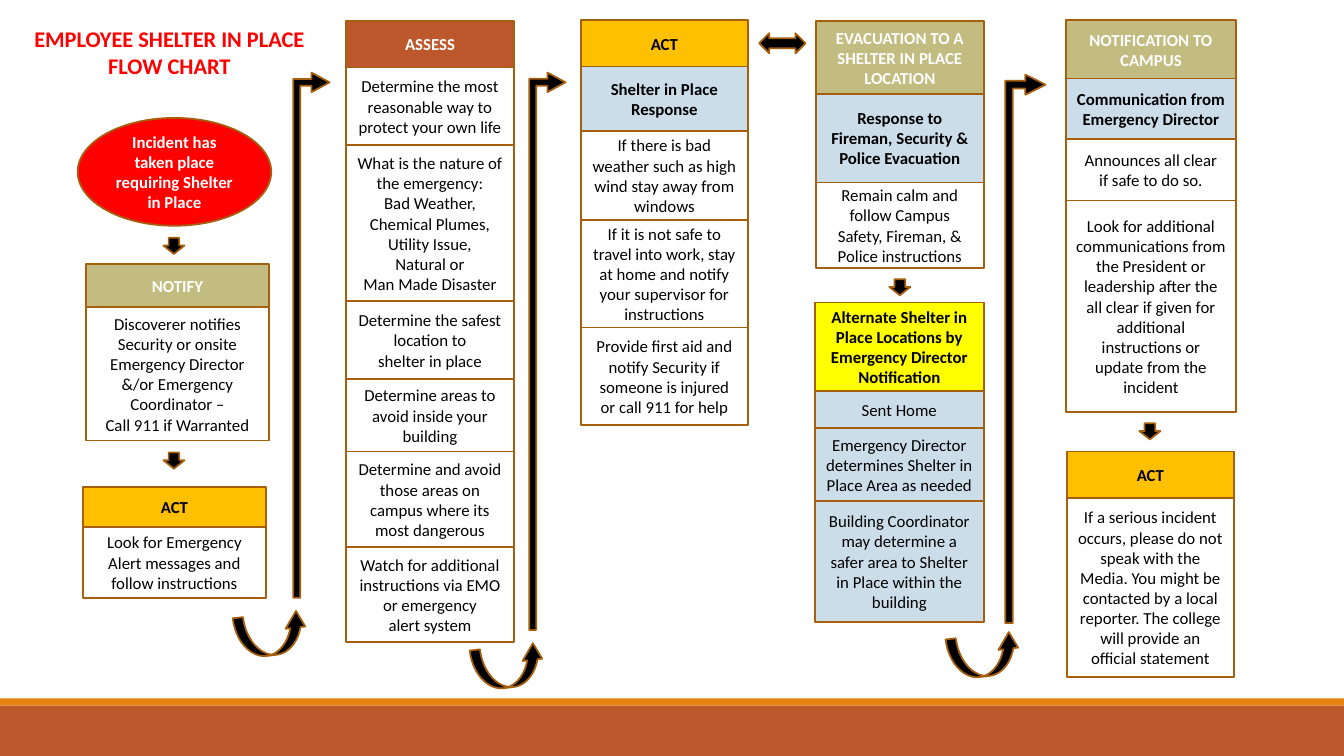
from pptx import Presentation
from pptx.dml.color import RGBColor
from pptx.enum.shapes import MSO_SHAPE as Shape
from pptx.enum.text import MSO_ANCHOR as Anchor, PP_ALIGN as Align
from pptx.util import Emu, Pt

COLORS = {
    "white": "FFFFFF", "black": "000000", "red": "FF0000", "yellow": "FFFF00",
    "gold": "FFC000", "rust": "BD582C", "orange": "E48312", "olive": "C2BC80",
    "blue": "CCDDEA", "outline": "A65F0D",
}
# Box style: fill, text colour, bold
STYLES = {
    "alarm": ("red", "white", True),
    "assess": ("rust", "white", True),
    "header": ("olive", "white", True),
    "act": ("gold", "black", True),
    "response": ("blue", "black", True),
    "alternate": ("yellow", "black", True),
    "option": ("blue", "black", False),
    "step": ("white", "black", False),
}


class FlowChart:
    """Draws on one slide, with 100 px to the inch."""

    SCALE = 9144
    FONT = "Calibri"

    def __init__(self, slide):
        self.slide = slide

    def place(self, *lengths):
        return [Emu(length * self.SCALE) for length in lengths]

    def shape(self, kind, box, fill, outlined=True):
        shape = self.slide.shapes.add_shape(kind, *self.place(*box))
        shape.shadow.inherit = False
        shape.fill.solid()
        shape.fill.fore_color.rgb = RGBColor.from_string(COLORS[fill])
        if outlined:
            shape.line.color.rgb = RGBColor.from_string(COLORS["outline"])
            shape.line.width = Pt(1.25)
        else:
            shape.line.fill.background()
        return shape

    def set_text(self, frame, text, size, color, bold):
        frame.word_wrap = True
        frame.text = text
        for paragraph in frame.paragraphs:
            paragraph.alignment = Align.CENTER
            font = paragraph.font
            font.name, font.size, font.bold = self.FONT, Pt(size), bold
            font.color.rgb = RGBColor.from_string(COLORS[color])

    def title(self, box, text):
        shape = self.slide.shapes.add_textbox(*self.place(*box))
        self.set_text(shape.text_frame, text, 16, "red", True)

    def box(self, box, style, text, kind=Shape.RECTANGLE):
        fill, color, bold = STYLES[style]
        frame = self.shape(kind, box, fill).text_frame
        frame.vertical_anchor = Anchor.MIDDLE
        self.set_text(frame, text, 12, color, bold)

    def stack(self, left, top, width, rows):
        for height, style, text in rows:
            self.box((left, top, width, height), style, text)
            top += height

    def arrow(self, kind, box, adjustments):
        shape = self.shape(kind, box, "black")
        for index, value in enumerate(adjustments):
            shape.adjustments[index] = value
        return shape

    def down_arrow(self, left, top):
        self.arrow(Shape.DOWN_ARROW, (left, top, 21, 16), (0.5, 0.52))

    def rising_arrow(self, box, head):
        self.arrow(Shape.BENT_ARROW, box, (0.19, head, 0.5, 0))

    def hook_arrow(self, left, top):
        shape = self.arrow(Shape.CURVED_DOWN_ARROW, (left, top, 73, 41),
                           (0.25, 0.48, 0.4))
        shape.rotation = 173.3
        shape._element.spPr.get_or_add_xfrm().set("flipH", "1")


def main():
    presentation = Presentation()
    presentation.slide_width = Emu(1333 * FlowChart.SCALE)
    presentation.slide_height = Emu(750 * FlowChart.SCALE)
    slide = presentation.slides.add_slide(presentation.slide_layouts[6])
    chart = FlowChart(slide)

    # Footer bands
    chart.shape(Shape.RECTANGLE, (0, 700, 1333, 50), "rust", outlined=False)
    chart.shape(Shape.RECTANGLE, (0, 693, 1333, 7), "orange", outlined=False)

    # Title and starting point
    chart.title((17, 20, 302, 64), "EMPLOYEE SHELTER IN PLACE\nFLOW CHART")
    chart.box((77, 117, 192, 107), "alarm",
              "Incident has taken place requiring Shelter in Place",
              Shape.FLOWCHART_CONNECTOR)

    # Notify
    chart.stack(85, 262, 182, [
        (43, "header", "NOTIFY"),
        (132, "step", "Discoverer notifies Security or onsite Emergency Director "
                      "&/or Emergency Coordinator –\nCall 911 if Warranted"),
    ])
    chart.stack(82, 483, 182, [
        (40, "act", "ACT"),
        (70, "step", "Look for Emergency Alert messages and follow instructions"),
    ])

    # Assess
    chart.stack(343, 21, 167, [
        (46, "assess", "ASSESS"),
        (77, "step", "Determine the most reasonable way to protect your own life"),
        (155, "step", "What is the nature of the emergency:\nBad Weather, Chemical "
                      "Plumes, Utility Issue,\nNatural or\nMan Made Disaster"),
        (77, "step", "Determine the safest location to\nshelter in place"),
        (72, "step", "Determine areas to avoid inside your building"),
        (95, "step", "Determine and avoid those areas on campus where its "
                     "most dangerous"),
        (94, "step", "Watch for additional instructions via EMO or emergency\n"
                     "alert system"),
    ])

    # Act
    chart.stack(576, 20, 166, [
        (46, "act", "ACT"),
        (64, "response", "Shelter in Place Response"),
        (88, "step", "If there is bad weather such as high wind stay away "
                     "from windows"),
        (107, "step", "If it is not safe to travel into work, stay at home and "
                      "notify your supervisor for instructions"),
        (97, "step", "Provide first aid and notify Security if someone is "
                     "injured or call 911 for help"),
    ])

    # Evacuation and alternate locations
    chart.stack(809, 21, 167, [
        (72, "header", "EVACUATION TO A SHELTER IN PLACE LOCATION"),
        (88, "response", "Response to\nFireman, Security &\nPolice Evacuation"),
        (85, "step", "Remain calm and follow Campus Safety, Fireman, & "
                     "Police instructions"),
    ])
    chart.stack(808, 300, 168, [
        (88, "alternate", "Alternate Shelter in Place Locations by Emergency "
                          "Director Notification"),
        (37, "option", "Sent Home"),
        (72, "option", "Emergency Director determines Shelter in Place Area "
                       "as needed"),
        (120, "option", "Building Coordinator may determine a safer area to "
                        "Shelter in Place within the building"),
    ])

    # Notification to campus
    chart.stack(1057, 20, 169, [
        (58, "header", "NOTIFICATION TO CAMPUS"),
        (60, "response", "Communication from Emergency Director"),
        (61, "step", "Announces all clear\nif safe to do so."),
        (210, "step", "Look for additional communications from the President or "
                      "leadership after the all clear if given for additional "
                      "instructions or update from the incident"),
    ])
    chart.stack(1058, 448, 166, [
        (46, "act", "ACT"),
        (178, "step", "If a serious incident occurs, please do not speak with the "
                      "Media. You might be contacted by a local reporter. The "
                      "college will provide an official statement"),
    ])

    # Arrows within and between the columns
    for left, top in ((162, 236), (162, 449), (882, 277), (1130, 420)):
        chart.down_arrow(left, top)
    for box, head in (((291, 72, 36, 521), 0.27),
                      ((525, 72, 36, 553), 0.27),
                      ((997, 74, 40, 544), 0.25)):
        chart.rising_arrow(box, head)
    for left, top in ((233, 609), (468, 641), (940, 630)):
        chart.hook_arrow(left, top)
    chart.arrow(Shape.LEFT_RIGHT_ARROW, (753, 33, 46, 20), (0.5, 0.5))

    presentation.save("out.pptx")


if __name__ == "__main__":
    main()
